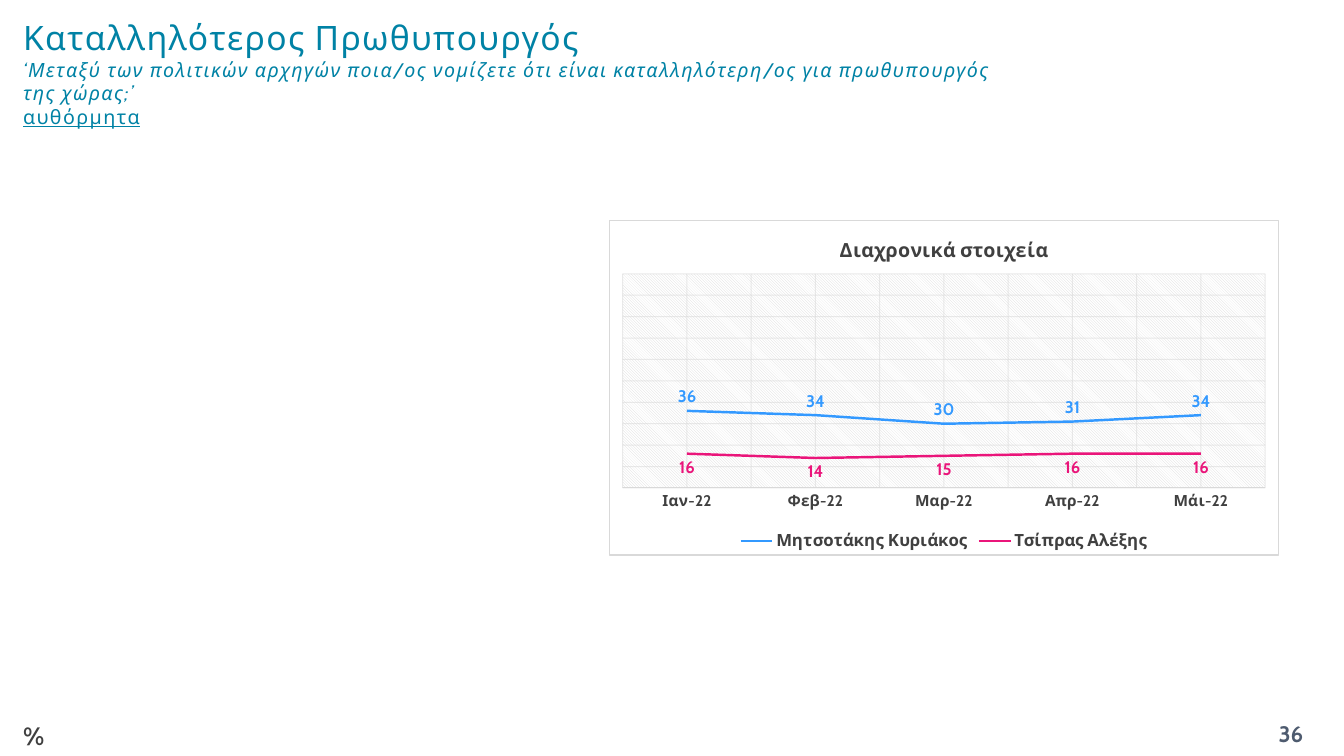
from copy import deepcopy

from lxml.etree import SubElement
from pptx import Presentation
from pptx.chart.data import CategoryChartData
from pptx.dml.color import RGBColor
from pptx.enum.chart import XL_CHART_TYPE as Kind, XL_LABEL_POSITION as Spot
from pptx.enum.chart import XL_LEGEND_POSITION as Side, XL_MARKER_STYLE as Mark
from pptx.enum.chart import XL_TICK_MARK as Tick
from pptx.enum.dml import MSO_PATTERN as Hatch
from pptx.enum.text import MSO_ANCHOR as Anchor, PP_ALIGN as Align
from pptx.oxml import parse_xml
from pptx.oxml.ns import nsdecls, qn
from pptx.util import Pt

TEAL = RGBColor(0x00, 0x82, 0xA5)
SLATE = RGBColor(0x4E, 0x5B, 0x6F)
DARK = RGBColor(0x40, 0x40, 0x40)
GRAY = RGBColor(0x80, 0x80, 0x80)
PALE = RGBColor(0xD9, 0xD9, 0xD9)
WHITE = RGBColor(0xFF, 0xFF, 0xFF)
BLACK = RGBColor(0x00, 0x00, 0x00)
BLUE = RGBColor(0x33, 0x99, 0xFF)
PINK = RGBColor(0xEA, 0x15, 0x7A)


class Page:
    face = "Cabin"

    def __init__(self, deck):
        self.slide = deck.slides.add_slide(deck.slide_layouts[6])

    def style(self, font, size, color=None, bold=False):
        font.name, font.size, font.bold = self.face, Pt(size), bold
        if color is not None:
            font.color.rgb = color

    def text(self, box, lines, color, bold=False, gap=0, align=Align.LEFT, anchor=Anchor.TOP):
        """Each line is (words, size, italic, underlined)."""
        frame = self.slide.shapes.add_textbox(*map(Pt, box)).text_frame
        frame.word_wrap, frame.vertical_anchor = True, anchor
        para = frame.paragraphs[0]
        para.alignment = align
        for i, (words, size, slant, under) in enumerate(lines):
            run = para.add_run()
            run.text = words
            self.style(run.font, size, color, bold)
            run.font.italic, run.font.underline = slant, under
            props = run._r.get_or_add_rPr()
            if gap:
                props.set("spc", str(gap * 100))
            if i < len(lines) - 1:
                para.add_line_break()
                para._p[-1].append(deepcopy(props))
        return para

    def grid(self, axis, share):
        """Pale major gridlines at the given opacity."""
        line = axis.major_gridlines.format.line
        line.width, line.color.rgb = Pt(0.75), PALE
        for tint in axis._element.iter(qn("a:srgbClr")):
            SubElement(tint, qn("a:alpha")).set("val", str(share * 1000))

    def chart(self, box, title, cats, rows):
        """Each row is (name, values, color, label position)."""
        data = CategoryChartData()
        data.categories = cats
        for name, vals, *_ in rows:
            data.add_series(name, vals)
        chart = self.slide.shapes.add_chart(Kind.LINE, *map(Pt, box), data).chart
        self.style(chart.font, 10, BLACK)

        # Title and legend
        chart.has_title = True
        run = chart.chart_title.text_frame.paragraphs[0].add_run()
        run.text = title
        self.style(run.font, 14, DARK, True)
        chart.chart_title.include_in_layout = False
        chart.has_legend = True
        chart.legend.position = Side.BOTTOM
        chart.legend.include_in_layout = False
        self.style(chart.legend.font, 12, DARK, True)

        # Axes and grid
        cat, val = chart.category_axis, chart.value_axis
        self.grid(cat, 54)
        self.grid(val, 54)
        cat.has_minor_gridlines = True
        look = cat._element.find(qn("c:majorGridlines"))[0]
        cat._element.find(qn("c:minorGridlines")).append(deepcopy(look))
        val.minimum_scale, val.maximum_scale, val.major_unit = 0, 100, 10
        val.visible = False
        cat.major_tick_mark = cat.minor_tick_mark = Tick.NONE
        cat.format.line.width, cat.format.line.color.rgb = Pt(0.75), PALE
        self.style(cat.tick_labels.font, 11, DARK, True)

        # Lines and their labels
        chart.plots[0].vary_by_categories = False
        for series, (_, _, color, spot) in zip(chart.plots[0].series, rows):
            series.smooth = False
            series.marker.style = Mark.NONE
            series.format.line.width, series.format.line.color.rgb = Pt(1.75), color
            labels = series.data_labels
            labels.show_value, labels.position = True, spot
            self.style(labels.font, 12, color, True)
        self.frame(chart)

    def frame(self, chart):
        """Plot place, hatched plot fill and outer border."""
        space = chart._chartSpace
        body = space.find(qn("c:chart"))
        plot = body.find(qn("c:plotArea"))
        for old in plot.findall(qn("c:layout")):
            plot.remove(old)
        sizes = "".join(f'<c:{k} val="{v}"/>' for k, v in
                        (("x", 0.02), ("y", 0.16), ("w", 0.96), ("h", 0.64)))
        plot.insert(0, parse_xml(
            f'<c:layout {nsdecls("c")}><c:manualLayout><c:layoutTarget val="inner"/>'
            f'<c:xMode val="edge"/><c:yMode val="edge"/>{sizes}</c:manualLayout></c:layout>'))
        plot.append(parse_xml(
            f'<c:spPr {nsdecls("c", "a")}><a:pattFill prst="ltDnDiag">'
            f'<a:fgClr><a:srgbClr val="{PALE}"/></a:fgClr>'
            f'<a:bgClr><a:srgbClr val="{WHITE}"/></a:bgClr></a:pattFill></c:spPr>'))
        body.addnext(parse_xml(
            f'<c:spPr {nsdecls("c", "a")}><a:solidFill><a:srgbClr val="{WHITE}"/></a:solidFill>'
            f'<a:ln w="{Pt(0.75)}"><a:solidFill><a:srgbClr val="{PALE}"/></a:solidFill></a:ln>'
            '</c:spPr>'))
        if space.find(qn("c:roundedCorners")) is None:
            space.find(qn("c:date1904")).addnext(
                parse_xml(f'<c:roundedCorners {nsdecls("c")} val="0"/>'))


def main():
    deck = Presentation()
    deck.slide_width, deck.slide_height = Pt(960), Pt(540)
    page = Page(deck)

    # Heading
    page.text((9.4, 9.4, 707, 85), [
        ("Καταλληλότερος Πρωθυπουργός", 24, False, False),
        ("‘Μεταξύ των πολιτικών αρχηγών ποια/ος νομίζετε ότι είναι "
         "καταλληλότερη/ος για πρωθυπουργός της χώρας;’ ", 14, True, False),
        ("αυθόρμητα", 14, False, True),
    ], TEAL, gap=1, anchor=Anchor.MIDDLE)

    # Trend chart
    page.chart((434.9, 157, 478.8, 239.8), "Διαχρονικά στοιχεία",
               ["Ιαν-22", "Φεβ-22", "Μαρ-22", "Απρ-22", "Μάι-22"], [
        ("Μητσοτάκης Κυριάκος", (36, 34, 30, 31, 34), BLUE, Spot.ABOVE),
        ("Τσίπρας Αλέξης", (16, 14, 15, 16, 16), PINK, Spot.BELOW),
    ])

    # Footer
    page.text((884.2, 511.2, 75.6, 28.8), [("36", 16, False, False)], SLATE, True,
              align=Align.CENTER)
    unit = page.text((9.4, 511.2, 51, 28.8), [("%", 18, False, False)], None, True)
    fill = unit.runs[0].font.fill
    fill.patterned()
    fill.pattern = Hatch.DARK_UPWARD_DIAGONAL
    fill.fore_color.rgb, fill.back_color.rgb = GRAY, DARK

    deck.save("out.pptx")


if __name__ == "__main__":
    main()
